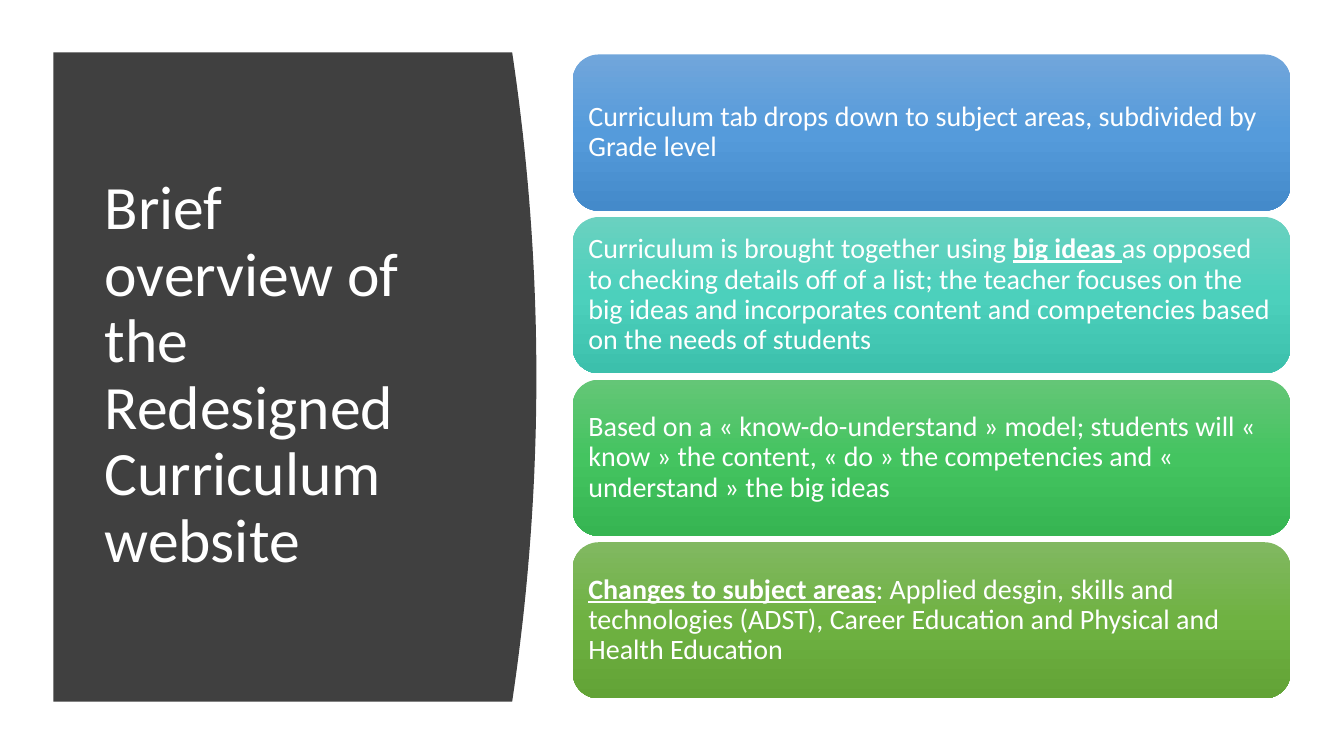
from copy import deepcopy
from dataclasses import dataclass

from pptx import Presentation
from pptx import util as u
from pptx.dml.color import RGBColor
from pptx.enum import shapes, text
from pptx.oxml.ns import qn
from pptx.shapes.autoshape import Shape
from pptx.slide import Slide
from pptx.text.text import TextFrame

FONT = "Calibri"
WHITE = "FFFFFF"
PANEL_COLOR = "404040"
PANEL_LEFT, PANEL_EDGE, PANEL_PEAK = 0.53, 5.08, 5.32
PANEL_TOP, PANEL_BOTTOM = 0.52, 6.96
CURVE_STEPS = 40
CARD_LEFT, CARD_TOP, CARD_WIDTH, CARD_HEIGHT = 5.68, 0.54, 7.12, 1.55
CARD_PITCH = 1.613
CARD_INSET = 0.08


@dataclass
class Run:
    text: str
    strong: bool = False


@dataclass
class Card:
    gradient: tuple[str, str, str]
    runs: list[Run]


CARDS = [
    Card(("71A6DB", "559BDB", "448ACA"), [
        Run("Curriculum tab drops down to subject areas, subdivided by Grade level"),
    ]),
    Card(("6AD1C0", "4CD0BC", "3CC0AC"), [
        Run("Curriculum is brought together using "),
        Run("big ideas ", strong=True),
        Run("as opposed to checking details off of a list; the teacher focuses on the "
            "big ideas and incorporates content and competencies based on the needs of students"),
    ]),
    Card(("64C677", "44C460", "36B552"), [
        Run("Based on a « know-do-understand » model; students will « know » the content, "
            "« do » the competencies and « understand » the big ideas"),
    ]),
    Card(("81B861", "6FB242", "62A336"), [
        Run("Changes to subject areas", strong=True),
        Run(": Applied desgin, skills and technologies (ADST), Career Education "
            "and Physical and Health Education"),
    ]),
]


def color(value: str) -> RGBColor:
    return RGBColor.from_string(value)


def write(tf: TextFrame, runs: list[Run], size: int) -> None:
    tf.word_wrap = True
    tf.vertical_anchor = text.MSO_ANCHOR.MIDDLE
    p = tf.paragraphs[0]
    p.alignment = text.PP_ALIGN.LEFT
    p.line_spacing = 0.9
    for run in runs:
        r = p.add_run()
        r.text = run.text
        r.font.name = FONT
        r.font.size = u.Pt(size)
        r.font.color.rgb = color(WHITE)
        r.font.bold = run.strong
        r.font.underline = run.strong


def fill_gradient(sp: Shape, colors: tuple[str, str, str]) -> None:
    sp.fill.gradient()
    sp.fill.gradient_angle = 270
    stops = sp.element.spPr.find(".//" + qn("a:gsLst"))
    stops.append(deepcopy(stops[0]))
    for i, stop in enumerate(sp.fill.gradient_stops):
        stop.position = i / (len(colors) - 1)
        stop.color.rgb = color(colors[i])


def add_panel(s: Slide) -> None:
    middle = (PANEL_TOP + PANEL_BOTTOM) / 2
    half = (PANEL_BOTTOM - PANEL_TOP) / 2
    points = []
    for i in range(CURVE_STEPS + 1):
        t = 2 * i / CURVE_STEPS - 1
        x = PANEL_PEAK - (PANEL_PEAK - PANEL_EDGE) * t ** 2
        points.append((u.Inches(x), u.Inches(middle + half * t)))
    points.append((u.Inches(PANEL_LEFT), u.Inches(PANEL_BOTTOM)))
    outline = s.shapes.build_freeform(u.Inches(PANEL_LEFT), u.Inches(PANEL_TOP))
    outline.add_line_segments(points, close=True)
    sp = outline.convert_to_shape()
    sp.shadow.inherit = False
    sp.fill.solid()
    sp.fill.fore_color.rgb = color(PANEL_COLOR)
    sp.line.fill.background()


def add_title(s: Slide) -> None:
    sp = s.shapes.add_textbox(u.Inches(0.94), u.Inches(1.11), u.Inches(3.74), u.Inches(5.24))
    write(sp.text_frame, [Run("Brief overview of the Redesigned Curriculum website")], 44)


def add_card(s: Slide, card: Card, top: float) -> None:
    sp = s.shapes.add_shape(shapes.MSO_SHAPE.ROUNDED_RECTANGLE, u.Inches(CARD_LEFT),
                            u.Inches(top), u.Inches(CARD_WIDTH), u.Inches(CARD_HEIGHT))
    sp.shadow.inherit = False
    sp.line.fill.background()
    fill_gradient(sp, card.gradient)
    tf = sp.text_frame
    tf.margin_left = tf.margin_right = u.Inches(CARD_INSET)
    tf.margin_top = tf.margin_bottom = u.Inches(CARD_INSET)
    write(tf, card.runs, 20)


def main() -> None:
    prs = Presentation()
    prs.slide_width = u.Inches(13.33)
    prs.slide_height = u.Inches(7.5)
    s = prs.slides.add_slide(prs.slide_layouts[6])
    add_panel(s)
    add_title(s)
    for i, card in enumerate(CARDS):
        add_card(s, card, CARD_TOP + i * CARD_PITCH)
    prs.save("out.pptx")


if __name__ == "__main__":
    main()
